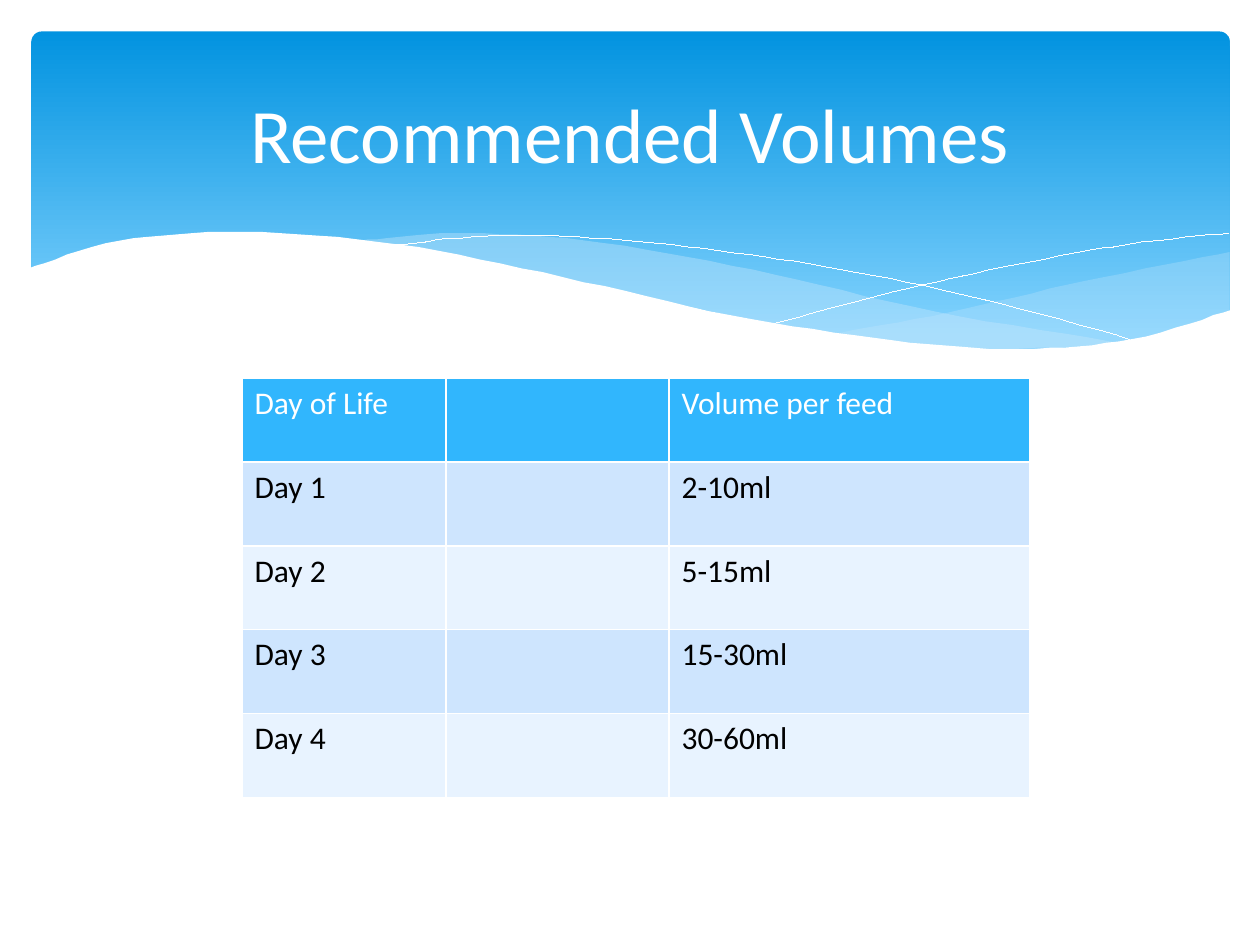
"""Build the Recommended Volumes slide: a wave banner above a feeding table."""
import pptx
import pptx.util
import pptx.dml.color
import pptx.enum.shapes
import pptx.enum.text
import pptx.oxml
import pptx.oxml.ns

PX = 9144
STEPS = 8
FONT = "Calibri"
SPACE = pptx.oxml.ns.nsdecls("a")
INK = {
    "white": "FFFFFF", "black": "000000", "deep": "0293E0", "sky": "83D3FE",
    "mist": "C6E7FC", "head": "31B6FD", "odd": "CEE5FE", "even": "E8F3FF",
}


def tint(name):
    return pptx.dml.color.RGBColor.from_string(INK[name])


def curve(knots):
    """Return points on a smooth Catmull-Rom curve through the knots."""
    padded = knots[:1] + knots + knots[-1:]
    points = knots[:1]
    for quad in zip(padded, padded[1:], padded[2:], padded[3:]):
        for step in range(1, STEPS + 1):
            t = step / STEPS
            points = points + [tuple(
                b + t * (c - a) / 2
                + t ** 2 * (2 * a - 5 * b + 4 * c - d) / 2
                + t ** 3 * (3 * b - a - 3 * c + d) / 2
                for a, b, c, d in zip(*quad))]
    return points


deck = pptx.Presentation()
deck.slide_width, deck.slide_height = 1000 * PX, 750 * PX
slide = deck.slides.add_slide(deck.slide_layouts[6])
shapes = slide.shapes

banner = shapes.add_shape(
    pptx.enum.shapes.MSO_SHAPE.ROUNDED_RECTANGLE, 25 * PX, 25 * PX, 951 * PX, 270 * PX)
banner.adjustments[0] = 0.03
banner.shadow.inherit = False
banner.line.fill.background()
banner.fill.gradient()
banner.fill.gradient_angle = 270
for stop, name, place in zip(banner.fill.gradient_stops, ("deep", "sky"), (0, 0.9)):
    stop.color.rgb = tint(name)
    stop.position = place

ribbons = [
    {
        "top": [(661, 265), (753, 248), (861, 223), (976, 200)],
        "base": [(661, 265), (745, 275), (824, 277), (905, 269), (976, 247)],
        "ink": "mist", "alpha": 29,
    },
    {
        "top": [(286, 191), (361, 185), (465, 191), (598, 214), (741, 247), (893, 273)],
        "base": [(286, 191), (404, 211), (530, 240), (665, 266), (773, 277), (893, 273)],
        "ink": "mist", "alpha": 40,
    },
]
strands = [
    [(309, 195), (374, 188), (433, 187), (510, 192), (608, 204), (695, 219),
     (795, 241), (907, 272)],
    [(613, 257), (720, 229), (806, 210), (895, 194), (975, 185)],
]
front = {
    "top": [(23, 213), (95, 191), (193, 184), (316, 194), (447, 220), (579, 250),
            (708, 270), (809, 277), (899, 269), (977, 246)],
    "base": [(23, 329), (977, 329)],
    "ink": "white", "alpha": 100,
}
lines = [{"top": knots, "base": [], "ink": None} for knots in strands]

for wave in ribbons + lines + [front]:
    edge = curve(wave["top"]) + curve(wave["base"])[::-1]
    filled = bool(wave["base"])
    pen = shapes.build_freeform(*edge[0], scale=PX)
    pen.add_line_segments(edge[1:], close=filled)
    shape = pen.convert_to_shape()
    shape.shadow.inherit = False
    if filled:
        shape.line.fill.background()
        shape.fill.solid()
        shape.fill.fore_color.rgb = tint(wave["ink"])
        color = shape._element.spPr.find(".//" + pptx.oxml.ns.qn("a:srgbClr"))
        color.append(pptx.oxml.parse_xml(f'<a:alpha {SPACE} val="{wave["alpha"] * 1000}"/>'))
    else:
        shape.fill.background()
        shape.line.color.rgb = tint("white")
        shape.line.width = 1

rows = [
    ("Day of Life", "", "Volume per feed"),
    ("Day 1", "", "2-10ml"),
    ("Day 2", "", "5-15ml"),
    ("Day 3", "", "15-30ml"),
    ("Day 4", "", "30-60ml"),
]
widths = (162, 177, 286)
tall = 333 * PX
texts = []
table = shapes.add_table(
    len(rows), len(widths), 192 * PX, 300 * PX, sum(widths) * PX, tall).table
table.first_row = table.horz_banding = False
for column, width in zip(table.columns, widths):
    column.width = width * PX
for r, words in enumerate(rows):
    table.rows[r].height = tall // len(rows)
    shade = ("even", "odd")[r % 2] if r else "head"
    for c, word in enumerate(words):
        cell = table.cell(r, c)
        cell.fill.solid()
        cell.fill.fore_color.rgb = tint(shade)
        if word:
            texts.append((cell.text_frame, word, 18, "black" if r else "white"))
        for i, side in enumerate("LRTB"):
            cell._tc.get_or_add_tcPr().insert(i, pptx.oxml.parse_xml(
                f'<a:ln{side} {SPACE} w="{pptx.util.Pt(1)}"><a:solidFill>'
                f'<a:srgbClr val="{INK["white"]}"/></a:solidFill></a:ln{side}>'))

title = shapes.add_textbox(50 * PX, 37 * PX, 900 * PX, 137 * PX).text_frame
title.word_wrap = True
title.vertical_anchor = pptx.enum.text.MSO_ANCHOR.MIDDLE
title.paragraphs[0].alignment = pptx.enum.text.PP_ALIGN.CENTER
texts.append((title, "Recommended Volumes", 44, "white"))

for frame, word, size, name in texts:
    run = frame.paragraphs[0].add_run()
    run.text = word
    run.font.size = pptx.util.Pt(size)
    run.font.name = FONT
    run.font.color.rgb = tint(name)

deck.save("out.pptx")
